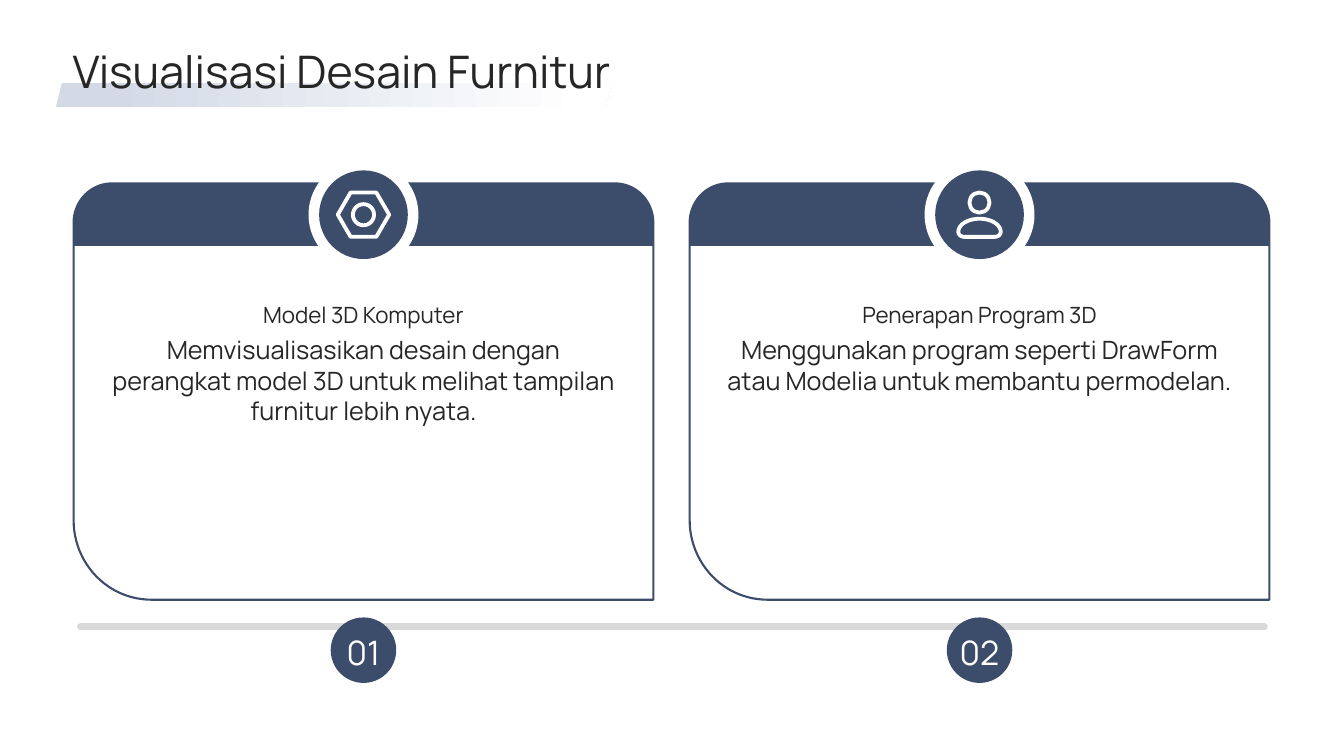
from math import cos, pi, sin

from pptx import Presentation
from pptx.dml.color import RGBColor
from pptx.enum.shapes import MSO_CONNECTOR as Connector, MSO_SHAPE as Shape
from pptx.enum.text import MSO_ANCHOR as Anchor, PP_ALIGN as Align
from pptx.oxml.ns import qn
from pptx.oxml.xmlchemy import OxmlElement
from pptx.util import Inches, Pt

# Content
TITLE = "Visualisasi Desain Furnitur"
CARDS = [
    ("01", "hexagon", "Model 3D Komputer",
     "Memvisualisasikan desain dengan perangkat model 3D untuk melihat "
     "tampilan furnitur lebih nyata."),
    ("02", "person", "Penerapan Program 3D",
     "Menggunakan program seperti DrawForm atau Modelia untuk membantu "
     "permodelan."),
]

# Style
COLORS = {"navy": "3C4C6B", "white": "FFFFFF", "ink": "262626",
          "rail": "D9D9D9", "mist": "D3DAE6"}
FORMATS = {
    "title": {"name": "Manrope", "size": Pt(32)},
    "heading": {"name": "Manrope", "size": Pt(16)},
    "body": {"name": "Manrope", "size": Pt(18)},
    "number": {"name": "Manrope", "size": Pt(24)},
}

# Layout in inches
CARD_LEFT, CARD_TOP, CARD_WIDTH, CARD_HEIGHT = 0.73, 1.82, 5.75, 4.13
CARD_STEP = 6.11
HEADER_HEIGHT = 0.62
TEXT_WIDTH = 5.02
ICON_Y = 2.13
NUMBER_Y = 6.45
ICON_LINE = 2.75
SHARP = (0, 0)
SOFT = (0.38, 0.39)

presentation = Presentation()
presentation.slide_width, presentation.slide_height = Inches(13.33), Inches(7.5)
slide = presentation.slides.add_slide(presentation.slide_layouts[6])
shapes = slide.shapes


def color(name):
    return RGBColor.from_string(COLORS[name])


def paint(shape, fill=None, line=None, line_width=1.5):
    shape.shadow.inherit = False
    if fill:
        shape.fill.solid()
        shape.fill.fore_color.rgb = color(fill)
    else:
        shape.fill.background()
    if line:
        shape.line.color.rgb = color(line)
        shape.line.width = Pt(line_width)
    else:
        shape.line.fill.background()


def add_centered(kind, x, y, width, height, **style):
    shape = shapes.add_shape(kind, Inches(x - width / 2), Inches(y - height / 2),
                             Inches(width), Inches(height))
    paint(shape, **style)
    return shape


def add_circle(x, y, diameter, **style):
    return add_centered(Shape.OVAL, x, y, diameter, diameter, **style)


def add_rounded(left, top, width, height, radii, **style):
    """Outline whose corners (clockwise from top left) have own (rx, ry)."""
    right, bottom = left + width, top + height
    corners = [(left, top, 1, 1), (right, top, -1, 1),
               (right, bottom, -1, -1), (left, bottom, 1, -1)]
    points = []
    for index, ((x, y, to_x, to_y), (rx, ry)) in enumerate(zip(corners, radii)):
        steps = 24 if rx else 0
        for step in range(steps + 1):
            angle = pi + index * pi / 2 + step * pi / 2 / max(steps, 1)
            points.append((Inches(x + rx * (to_x + cos(angle))),
                           Inches(y + ry * (to_y + sin(angle)))))
    builder = shapes.build_freeform(*points[0])
    builder.add_line_segments(points[1:], close=True)
    paint(builder.convert_to_shape(), **style)


def add_text(text, style, left, top, width, height, ink="ink",
             align=Align.CENTER, anchor=Anchor.TOP, inset=0):
    box = shapes.add_textbox(Inches(left), Inches(top), Inches(width), Inches(height))
    frame = box.text_frame
    frame.word_wrap = True
    frame.vertical_anchor = anchor
    for side in ("left", "right", "top", "bottom"):
        setattr(frame, f"margin_{side}", Inches(inset))
    paragraph = frame.paragraphs[0]
    paragraph.alignment = align
    run = paragraph.add_run()
    run.text = text
    for key, value in FORMATS[style].items():
        setattr(run.font, key, value)
    run.font.color.rgb = color(ink)


def add_icon(kind, x):
    outline = {"line": "white", "line_width": ICON_LINE}
    if kind == "hexagon":
        hexagon = add_centered(Shape.HEXAGON, x, ICON_Y, 0.51, 0.44, **outline)
        hexagon.adjustments[0] = 0.29
        add_circle(x, ICON_Y, 0.21, **outline)
    else:
        add_circle(x, 2.01, 0.2, **outline)
        shoulder, foot = (0.21, 0.13), (0.06, 0.05)
        add_rounded(x - 0.21, 2.17, 0.42, 0.18,
                    [shoulder, shoulder, foot, foot], **outline)


# Rail behind the numbers
rail = shapes.add_connector(Connector.STRAIGHT, Inches(0.8), Inches(6.22),
                            Inches(12.54), Inches(6.22))
rail.line.color.rgb = color("rail")
rail.line.width = Pt(5)
rail_properties = rail._element.spPr
rail_properties.find(qn("a:ln")).set("cap", "rnd")
rail_properties.append(OxmlElement("a:effectLst"))

# Cards
for index, (number, icon, heading, body) in enumerate(CARDS):
    left = CARD_LEFT + index * CARD_STEP
    center = left + CARD_WIDTH / 2
    text_left = center - TEXT_WIDTH / 2
    add_rounded(left, CARD_TOP, CARD_WIDTH, CARD_HEIGHT,
                [SOFT, SOFT, SHARP, (0.77, 0.79)], fill="white", line="navy")
    add_rounded(left, CARD_TOP, CARD_WIDTH, HEADER_HEIGHT,
                [SOFT, SOFT, SHARP, SHARP], fill="navy")
    add_circle(center, ICON_Y, 1.09, fill="white")
    add_circle(center, ICON_Y, 0.88, fill="navy")
    add_icon(icon, center)
    add_text(heading, "heading", text_left, 2.59, TEXT_WIDTH, 0.66,
             anchor=Anchor.BOTTOM)
    add_text(body, "body", text_left, 3.32, TEXT_WIDTH, 2.42)
    add_circle(center, NUMBER_Y, 0.65, fill="navy")
    add_text(number, "number", center - 0.56, 6.22, 1.12, 0.46,
             ink="white", inset=0.05)

# Title over its fading underline
underline = add_centered(Shape.PARALLELOGRAM, 3.31, 0.94, 5.51, 0.24)
underline.fill.gradient()
underline.fill.gradient_angle = 0
for stop, (name, position) in zip(underline.fill.gradient_stops,
                                  [("mist", 0.1), ("white", 0.95)]):
    stop.color.rgb = color(name)
    stop.position = position
add_text(TITLE, "title", 0.72, 0.47, 11.88, 0.47,
         align=Align.LEFT, anchor=Anchor.MIDDLE)

presentation.save("out.pptx")
